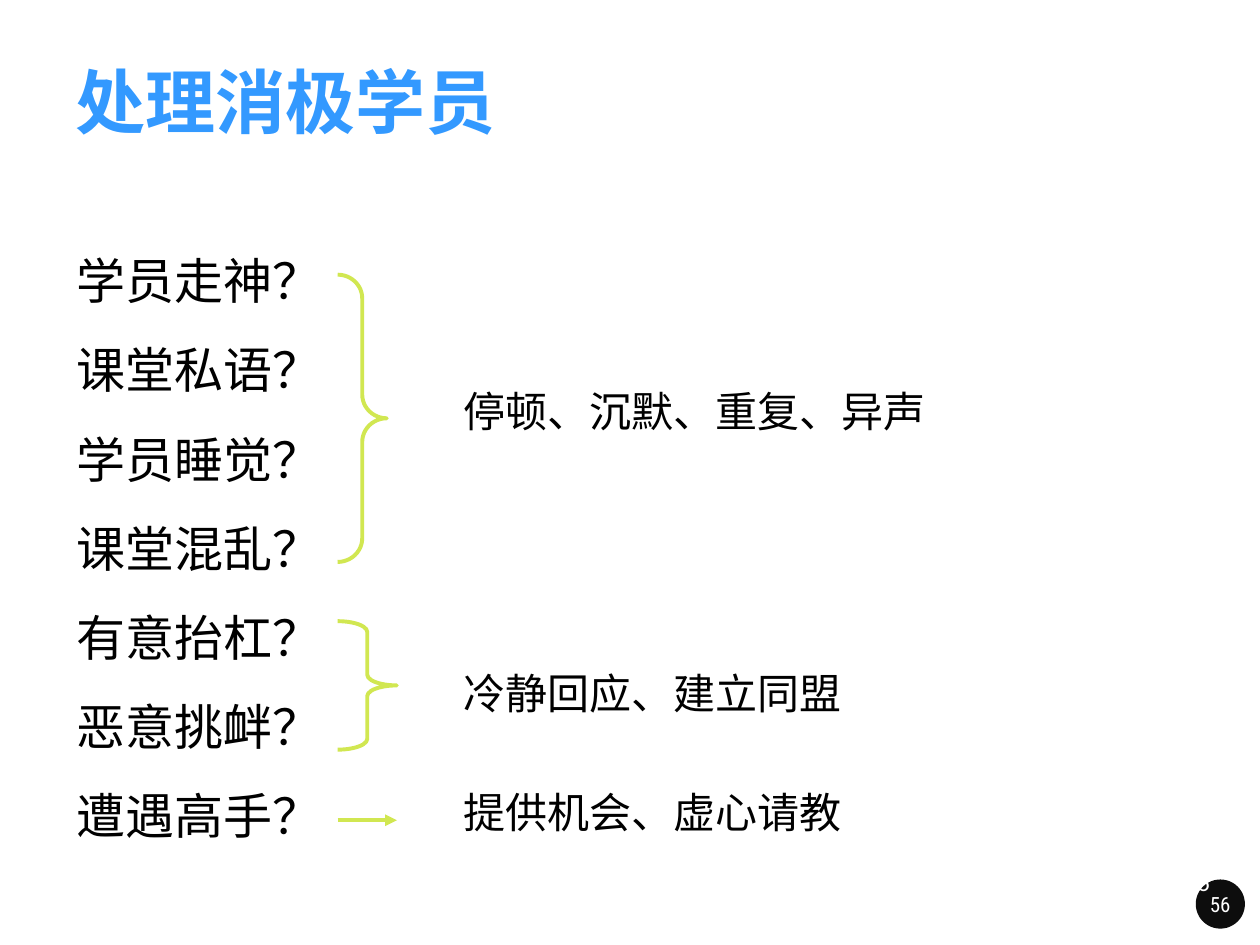
from lxml.etree import SubElement
from pptx import Presentation
from pptx.dml.color import RGBColor
from pptx.enum.shapes import MSO_CONNECTOR as Connector, MSO_SHAPE as Shape
from pptx.enum.text import MSO_ANCHOR as Anchor, PP_ALIGN as Align
from pptx.oxml.ns import qn
from pptx.util import Inches, Pt

BLUE = RGBColor(0x33, 0x99, 0xFF)
LIME = RGBColor(0xD1, 0xE7, 0x51)
BLACK = RGBColor(0, 0, 0)
NEAR_BLACK = RGBColor(0x0D, 0x0D, 0x0D)
WHITE = RGBColor(0xFF, 0xFF, 0xFF)

CJK = "Noto Sans CJK SC"
PAGE_NUMBER = "56"

# Grid: three columns, and one row for each behaviour
BEHAVIOUR_X, MARK_X, RESPONSE_X = 0.51, 2.68, 3.58
FIRST_ROW, ROW_STEP = 1.94, 0.707
LINE_WIDTH = Pt(2.25)

BEHAVIOURS = ["学员走神？", "课堂私语？", "学员睡觉？", "课堂混乱？",
              "有意抬杠？", "恶意挑衅？", "遭遇高手？"]
# top, width, text
RESPONSES = [(3.01, 4.1, "停顿、沉默、重复、异声"),
             (5.25, 3.7, "冷静回应、建立同盟"),
             (6.19, 3.7, "提供机会、虚心请教")]
# top, width, height, curl
BRACES = [(2.18, 0.39, 2.28, 0.483), (4.93, 0.47, 1.02, 0.181)]
ARROW_Y, ARROW_LENGTH = 6.51, 0.47


def add_span(para, text, size, color, font=CJK, bold=False):
    span = para.add_run()
    span.text = text
    span.font.size = Pt(size)
    span.font.name = font
    span.font.bold = bold
    span.font.color.rgb = color
    east_asian = SubElement(span.font._element, qn("a:ea"))
    east_asian.set("typeface", font)


def add_label(page, at, text, size, color, font=CJK, bold=False,
              align=Align.LEFT, anchor=Anchor.MIDDLE, right_inset=0.1):
    box = page.shapes.add_textbox(*map(Inches, at))
    frame = box.text_frame
    frame.word_wrap = True
    frame.vertical_anchor = anchor
    frame.margin_right = Inches(right_inset)
    para = frame.paragraphs[0]
    para.alignment = align
    add_span(para, text, size, color, font, bold)


def add_brace(page, top, width, height, curl):
    brace = page.shapes.add_shape(
        Shape.RIGHT_BRACE, *map(Inches, (MARK_X, top, width, height)))
    brace.shadow.inherit = False
    brace.adjustments[0] = curl
    brace.adjustments[1] = 0.5
    brace.fill.background()
    brace.line.color.rgb = LIME
    brace.line.width = LINE_WIDTH


def add_arrow(page):
    arrow = page.shapes.add_connector(
        Connector.STRAIGHT,
        *map(Inches, (MARK_X, ARROW_Y, MARK_X + ARROW_LENGTH, ARROW_Y)))
    arrow.line.color.rgb = LIME
    arrow.line.width = LINE_WIDTH
    SubElement(arrow.line._get_or_add_ln(), qn("a:tailEnd")).set("type", "triangle")
    SubElement(arrow._element.spPr, qn("a:effectLst"))


def add_page_badge(page):
    badge = page.shapes.add_shape(
        Shape.OVAL, *map(Inches, (9.49, 6.98, 0.39, 0.39)))
    badge.shadow.inherit = False
    badge.fill.solid()
    badge.fill.fore_color.rgb = NEAR_BLACK
    badge.line.fill.background()
    frame = badge.text_frame
    frame.vertical_anchor = Anchor.MIDDLE
    frame.margin_left = frame.margin_right = Inches(0.04)
    frame.margin_top = frame.margin_bottom = Inches(0.04)
    para = frame.paragraphs[0]
    para.alignment = Align.CENTER
    add_span(para, PAGE_NUMBER, 12, WHITE, "Roboto Condensed")


def main():
    deck = Presentation()
    deck.slide_width, deck.slide_height = Inches(10), Inches(7.5)
    page = deck.slides.add_slide(deck.slide_layouts[6])

    add_page_badge(page)
    add_label(page, (7.62, 6.83, 2.08, 0.5), PAGE_NUMBER, 14, WHITE,
              font="Calibri", align=Align.RIGHT, anchor=Anchor.TOP)
    add_label(page, (0.5, 0.36, 8.99, 0.87), "处理消极学员", 40, BLUE, bold=True)

    for row, behaviour in enumerate(BEHAVIOURS):
        top = FIRST_ROW + row * ROW_STEP
        add_label(page, (BEHAVIOUR_X, top, 2.06, 0.57), behaviour, 28, BLACK,
                  right_inset=0)
    for brace in BRACES:
        add_brace(page, *brace)
    add_arrow(page)
    for top, width, response in RESPONSES:
        add_label(page, (RESPONSE_X, top, width, 0.5), response, 24, BLACK)

    deck.save("out.pptx")


if __name__ == "__main__":
    main()
